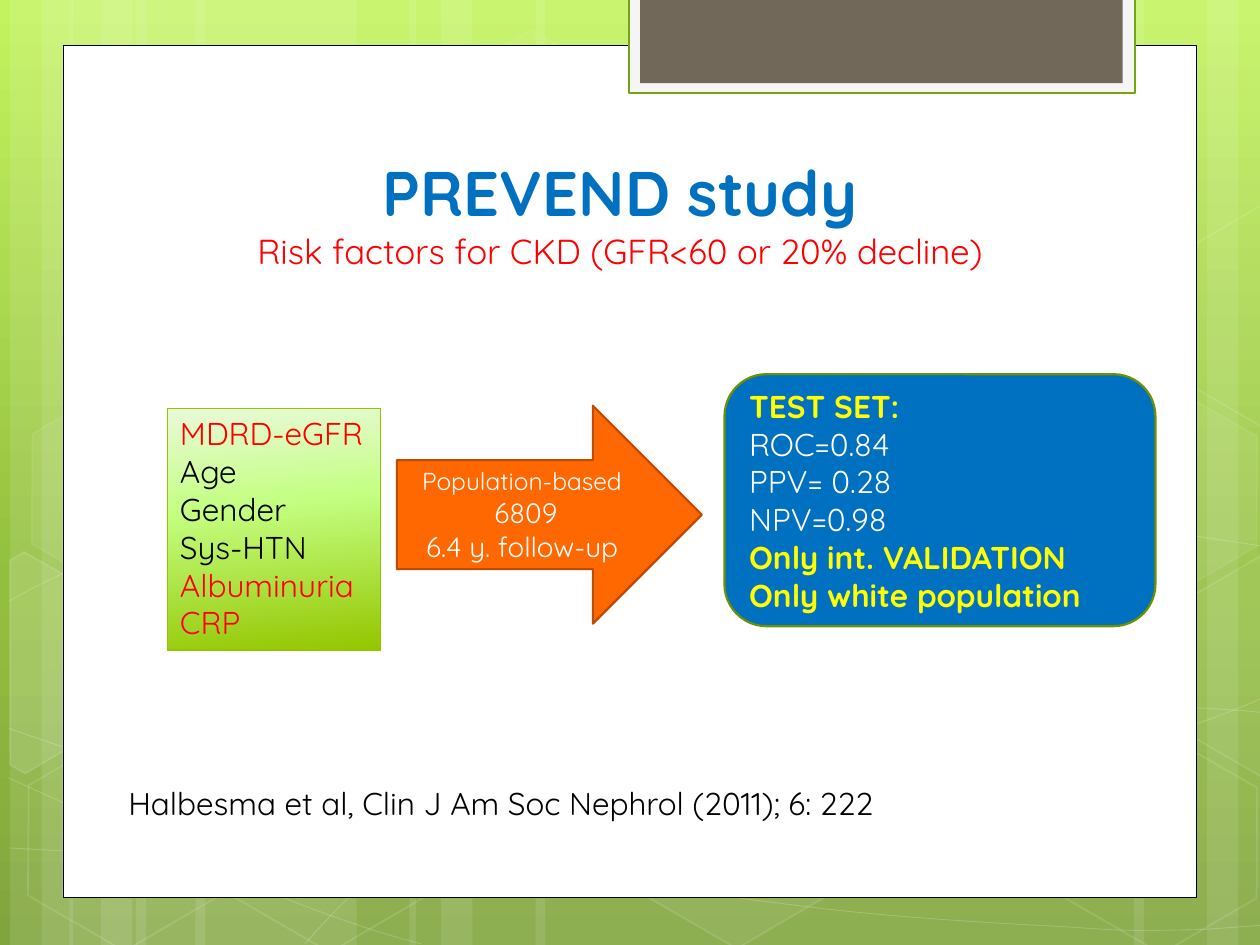
from dataclasses import dataclass
from typing import Optional

from lxml import etree
from pptx import Presentation
from pptx.dml.color import RGBColor
from pptx.enum.shapes import MSO_SHAPE
from pptx.enum.text import MSO_ANCHOR, MSO_AUTO_SIZE, PP_ALIGN
from pptx.oxml.ns import qn
from pptx.util import Inches, Pt

RECTANGLE = MSO_SHAPE.RECTANGLE
HEXAGON = MSO_SHAPE.HEXAGON
RIGHT_ARROW = MSO_SHAPE.RIGHT_ARROW
ROUNDED = MSO_SHAPE.ROUNDED_RECTANGLE
TOP, MIDDLE, BOTTOM = MSO_ANCHOR.TOP, MSO_ANCHOR.MIDDLE, MSO_ANCHOR.BOTTOM
LEFT, CENTER = PP_ALIGN.LEFT, PP_ALIGN.CENTER
FIT_TEXT = MSO_AUTO_SIZE.SHAPE_TO_FIT_TEXT
FONT = "Quicksand"
COLORS = {
    "white": "FFFFFF", "black": "000000", "red": "FF0000", "yellow": "FFFF00",
    "blue": "0070C0", "orange": "FF6700", "rust": "BD4C00", "olive": "6D9200",
    "lime": "94C600", "tab": "F5F5F5", "tab_edge": "74A510", "brown": "71685A",
}
PAGE_STOPS = [(0, "C3F35F"), (62, "93BF3F"), (100, "81A53E")]
FACTOR_STOPS = [(0, "EAF9DA"), (40, "C4FF82"), (100, "94C600")]


@dataclass
class Span:
    text: str
    size: float = 18
    color: str = "black"
    bold: bool = False


@dataclass
class Stroke:
    color: str
    width: float
    opacity: int = 100


@dataclass
class Hexagon:
    left: float
    top: float
    fill_opacity: int
    line_opacity: int


@dataclass
class Corner:
    points: list
    fill_opacity: int


@dataclass
class Curve:
    points: list
    straight_to: Optional[int] = None


STRIPES = [
    (1.08, 1.75), (0.08, 0.5), (0.33, 0.83), (1.55, 1.75), (0.55, 0.5), (0.8, 0.83),
    (7.33, 1.75), (9.58, 0.5), (9, 0.83), (4.25, 3.08), (3.25, 0.5), (3.5, 0.83),
]
CURVES = [
    Curve([(0.07, 6.73), (0.61, 6.76), (1.15, 6.79), (1.9, 6.78), (2.65, 6.77), (3.58, 6.75),
           (4.58, 6.65), (5.58, 6.55), (7, 6.36), (7.92, 6.17), (8.83, 5.98), (9.77, 5.68),
           (10.07, 5.51)]),
    Curve([(0.07, 4.77), (0.36, 4.61), (0.65, 4.46), (1.21, 4.31), (1.78, 4.16), (2.59, 3.94),
           (3.47, 3.87), (4.36, 3.8), (5.44, 3.79), (6.54, 3.87), (7.64, 3.95), (9.47, 4.26),
           (10.07, 4.34)]),
    Curve([(0.06, 6.17), (1.27, 6.72), (2.47, 7.27), (3.34, 7.49)]),
    Curve([(0.07, 5.78), (0.38, 5.89), (0.7, 6), (1.28, 6.16), (1.86, 6.31), (2.73, 6.56),
           (3.57, 6.73), (4.4, 6.9), (5.45, 7.08), (6.28, 7.18), (7.11, 7.29), (8, 7.33),
           (8.53, 7.36), (9.05, 7.4), (9.19, 7.38), (9.45, 7.38), (9.71, 7.37), (9.89, 7.35),
           (10.07, 7.34)]),
    Curve([(2.42, 7.49), (2.6, 7.29), (2.78, 7.09), (3.02, 6.91), (3.26, 6.73), (3.6, 6.53),
           (3.88, 6.39), (4.16, 6.25), (4.33, 6.19), (4.7, 6.09), (5.06, 5.99), (5.73, 5.85),
           (6.08, 5.78), (6.44, 5.71), (6.49, 5.71), (6.8, 5.69), (7.11, 5.66), (7.6, 5.63),
           (7.94, 5.62), (8.29, 5.61), (8.86, 5.62), (8.86, 5.62), (9.53, 5.62), (9.71, 5.63),
           (9.88, 5.64), (9.97, 5.65), (10.06, 5.66), (10.03, 5.65), (10.06, 5.66)], 22),
]
HEXAGONS = [
    Hexagon(3.34, 0.36, 4, 8), Hexagon(4.97, 5.89, 6, 12), Hexagon(0.11, 5.91, 0, 12),
    Hexagon(0.14, 3.12, 7, 8), Hexagon(1.74, 5.92, 0, 12), Hexagon(7.53, 4.53, 10, 12),
    Hexagon(8.34, 5.93, 0, 12), Hexagon(8.34, 3.14, 7, 8),
]
CORNERS = [
    Corner([(0.08, 4.45), (0.19, 4.38), (0.96, 4.82), (0.95, 5.7), (0.2, 6.14), (0.08, 6.07)], 10),
    Corner([(9.26, 4.85), (10.01, 4.41), (10.09, 4.46), (10.09, 6.13), (10.02, 6.17), (9.26, 5.73)], 4),
    Corner([(9.26, 2.07), (10.01, 1.63), (10.1, 1.68), (10.09, 3.35), (10.02, 3.39), (9.26, 2.95)], 0),
]


def paint(fill, color: str, opacity: int = 100) -> None:
    fill.solid()
    fill.fore_color.rgb = RGBColor.from_string(COLORS[color])
    if opacity < 100:
        tone = fill._xPr.find(qn("a:solidFill"))[0]
        etree.SubElement(tone, qn("a:alpha"), val=str(opacity * 1000))


def blend(fill, owner, stops: list, angle: float) -> None:
    fill.gradient()
    fill.gradient_angle = 360 - angle
    stop_list = next(owner.iter(qn("a:gsLst")))
    for stop in list(stop_list):
        stop_list.remove(stop)
    for position, color in stops:
        stop = etree.SubElement(stop_list, qn("a:gs"), pos=str(position * 1000))
        etree.SubElement(stop, qn("a:srgbClr"), val=color)


def style(shape, fill: Optional[str] = None, opacity: int = 100,
          stroke: Optional[Stroke] = None):
    shape.shadow.inherit = False
    if fill and opacity:
        paint(shape.fill, fill, opacity)
    else:
        shape.fill.background()
    if stroke:
        paint(shape.line.fill, stroke.color, stroke.opacity)
        shape.line.width = Pt(stroke.width)
    else:
        shape.line.fill.background()
    return shape


def add_box(page, kind, at: tuple, **look):
    return style(page.shapes.add_shape(kind, *map(Inches, at)), **look)


def add_outline(page, points: list, closed: bool, **look):
    builder = page.shapes.build_freeform(*map(Inches, points[0]))
    builder.add_line_segments([(Inches(x), Inches(y)) for x, y in points[1:]], close=closed)
    return style(builder.convert_to_shape(), **look)


def add_curve(page, curve: Curve, **look) -> None:
    shape = add_outline(page, curve.points, False, **look)
    steps = list(shape.element.iter(qn("a:lnTo")))
    if curve.straight_to:
        del steps[curve.straight_to - 1]
    for start in range(0, len(steps), 3):
        bend = etree.Element(qn("a:cubicBezTo"))
        steps[start].addprevious(bend)
        for step in steps[start:start + 3]:
            bend.append(step[0])
            step.getparent().remove(step)


def write(shape, lines: list, anchor=TOP, align=LEFT, grow: bool = False,
          breaks: bool = False) -> None:
    frame = shape.text_frame
    frame.word_wrap = not grow
    frame.vertical_anchor = anchor
    if grow:
        frame.auto_size = FIT_TEXT
    para = frame.paragraphs[0]
    for index, line in enumerate(lines):
        if index and breaks:
            para.add_line_break()
        elif index:
            para = frame.add_paragraph()
        para.alignment = align
        run = para.add_run()
        run.text = line.text
        run.font.name = FONT
        run.font.size = Pt(line.size)
        run.font.bold = line.bold
        run.font.color.rgb = RGBColor.from_string(COLORS[line.color])


def draw_backdrop(page) -> None:
    blend(page.background.fill, page.element, PAGE_STOPS, 90)
    for left, width in STRIPES:
        add_box(page, RECTANGLE, (left, 0, width, 7.5), fill="white", opacity=10)
    for curve in CURVES:
        add_curve(page, curve, stroke=Stroke("white", 0.5, 20))
    for item in HEXAGONS:
        cell = add_box(page, HEXAGON, (item.left, item.top, 1.75, 1.52), fill="white",
                       opacity=item.fill_opacity, stroke=Stroke("white", 1, item.line_opacity))
        cell.adjustments[0] = 0.285
        cell.rotation = 30
    for corner in CORNERS:
        add_outline(page, corner.points, True, fill="white", opacity=corner.fill_opacity,
                    stroke=Stroke("white", 1, 12))
    add_box(page, RECTANGLE, (0.5, 0.36, 9, 6.76), fill="white", stroke=Stroke("black", 0.5))
    add_box(page, RECTANGLE, (4.99, -0.02, 4.02, 0.76), fill="tab", stroke=Stroke("tab_edge", 1.25))
    add_box(page, RECTANGLE, (5.08, -0.02, 3.83, 0.68), fill="brown")


def draw_content(page) -> None:
    title = page.shapes.add_textbox(*map(Inches, (1.08, 1.33, 7.68, 0.87)))
    write(title, [Span("PREVEND study", 36, "blue", True),
                  Span("Risk factors for CKD (GFR<60 or 20% decline)", 19.8, "red")],
          anchor=BOTTOM, align=CENTER, breaks=True)
    factors = add_box(page, RECTANGLE, (1.33, 3.24, 1.69, 1.92), stroke=Stroke("lime", 0.75))
    blend(factors.fill, factors.element, FACTOR_STOPS, 84)
    write(factors, [Span("MDRD-eGFR", color="red"), Span("Age"), Span("Gender"),
                    Span("Sys-HTN"), Span("Albuminuria", color="red"),
                    Span("CRP", color="red")], grow=True)
    arrow = add_box(page, RIGHT_ARROW, (3.15, 3.22, 2.42, 1.73), fill="orange",
                    stroke=Stroke("rust", 1.25))
    write(arrow, [Span("Population-based", 14, "white"), Span(" 6809", 16, "white"),
                  Span("6.4 y. follow-up", 16, "white")], anchor=MIDDLE, align=CENTER)
    results = add_box(page, ROUNDED, (5.75, 2.97, 3.42, 2), fill="blue",
                      stroke=Stroke("olive", 1.25))
    scores = [Span(text, color="white") for text in ("ROC=0.84", "PPV= 0.28", "NPV=0.98")]
    heading, *limits = [Span(text, color="yellow", bold=True) for text in
                        ("TEST SET:", "Only int. VALIDATION", "Only white population")]
    write(results, [heading, *scores, *limits], anchor=MIDDLE)
    citation = page.shapes.add_textbox(*map(Inches, (0.92, 6.17, 6.56, 0.4)))
    write(citation, [Span("Halbesma et al, Clin J Am Soc Nephrol (2011); 6: 222")], grow=True)


def main() -> None:
    deck = Presentation()
    deck.slide_width, deck.slide_height = Inches(10), Inches(7.5)
    page = deck.slides.add_slide(deck.slide_layouts[6])
    draw_backdrop(page)
    draw_content(page)
    deck.save("out.pptx")


if __name__ == "__main__":
    main()
